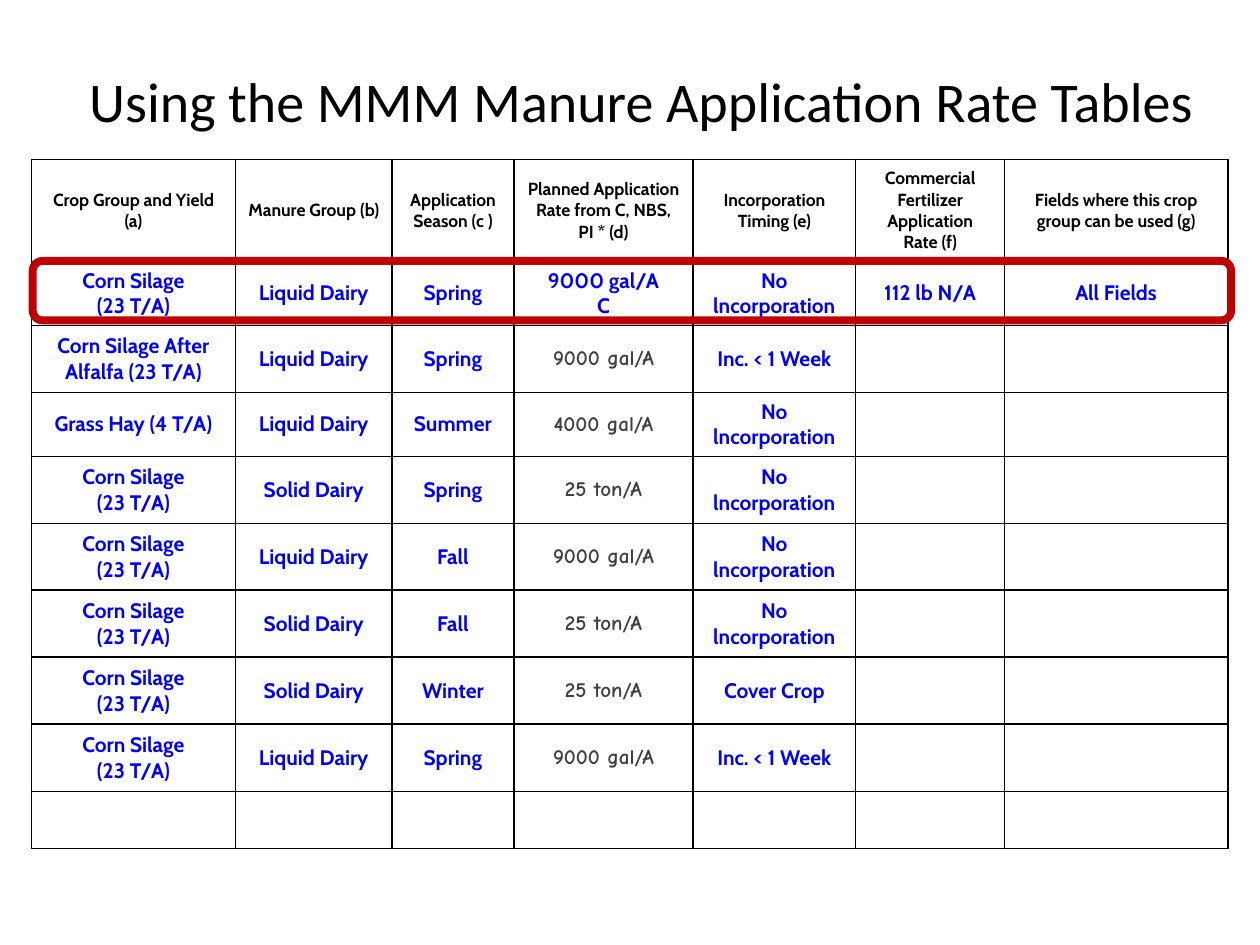
from lxml import etree
from pptx import Presentation
from pptx import util as u
from pptx.dml.color import RGBColor
from pptx.enum import shapes, text
from pptx.oxml import ns

BLACK, WHITE, BLUE, GREY, RED = "000000", "FFFFFF", "0000FF", "404040", "C00000"


def color(hex_string):
    return RGBColor.from_string(hex_string)


def add_borders(cell):
    """Draw a 1 pt black line on all four sides of the cell."""
    properties = cell._tc.get_or_add_tcPr()
    for position, side in enumerate(("lnL", "lnR", "lnT", "lnB")):
        line = etree.Element(ns.qn("a:" + side), w=str(u.Pt(1)))
        fill = etree.SubElement(line, ns.qn("a:solidFill"))
        etree.SubElement(fill, ns.qn("a:srgbClr"), val=BLACK)
        properties.insert(position, line)


presentation = Presentation()
presentation.slide_width = u.Cm(25.4)
presentation.slide_height = u.Cm(19.05)
slide = presentation.slides.add_slide(presentation.slide_layouts[6])

# Application rate table
corn = "Corn Silage\n(23 T/A)"
liquid, solid = "Liquid Dairy", "Solid Dairy"
surface, week = "No lncorporation", "Inc. < 1 Week"
rows = [
    ["Crop Group and Yield (a)", "Manure Group (b)", "Application Season (c )",
     "Planned Application Rate from C, NBS, PI * (d)", "Incorporation Timing (e)",
     "Commercial Fertilizer Application Rate (f)",
     "Fields where this crop group can be used (g)"],
    [corn, liquid, "Spring", "9000 gal/A\nC", surface, "112 lb N/A", "All Fields"],
    ["Corn Silage After Alfalfa (23 T/A)", liquid, "Spring", "9000 gal/A", week],
    ["Grass Hay (4 T/A)", liquid, "Summer", "4000 gal/A", surface],
    [corn, solid, "Spring", "25 ton/A", surface],
    [corn, liquid, "Fall", "9000 gal/A", surface],
    [corn, solid, "Fall", "25 ton/A", surface],
    [corn, solid, "Winter", "25 ton/A", "Cover Crop"],
    [corn, liquid, "Spring", "9000 gal/A", week],
    [],
]
column_widths = [4.12, 3.15, 2.46, 3.61, 3.28, 3.0, 4.5]
row_heights = [2.05, 1.24, 1.35, 1.29, 1.35, 1.35, 1.35, 1.35, 1.36, 1.15]
rate_column = 3

table = slide.shapes.add_table(
    len(rows), len(column_widths), u.Cm(0.63), u.Cm(3.22),
    u.Cm(sum(column_widths)), u.Cm(sum(row_heights))).table
table.first_row = table.horz_banding = False
for column, width in zip(table.columns, column_widths):
    column.width = u.Cm(width)

for row_index, (row, height) in enumerate(zip(rows, row_heights)):
    table.rows[row_index].height = u.Cm(height)
    for column_index in range(len(column_widths)):
        cell = table.cell(row_index, column_index)
        cell.fill.solid()
        cell.fill.fore_color.rgb = color(WHITE)
        add_borders(cell)
        if column_index >= len(row):
            continue
        cell.vertical_anchor = text.MSO_ANCHOR.MIDDLE
        cell.text_frame.text = row[column_index]
        is_header = row_index == 0
        is_pending_rate = row_index > 1 and column_index == rate_column
        for paragraph in cell.text_frame.paragraphs:
            paragraph.alignment = text.PP_ALIGN.CENTER
            font = paragraph.runs[0].font
            font.bold = True
            font.size = u.Pt(10 if is_header else 12)
            font.name = "Comic Neue" if is_pending_rate else "Cabin"
            font.color.rgb = color(
                BLACK if is_header else GREY if is_pending_rate else BLUE)

# Title
title = slide.shapes.add_textbox(u.Cm(1.8), u.Cm(1), u.Cm(22.63), u.Cm(2.03))
frame = title.text_frame
frame.word_wrap = True
frame.margin_left = frame.margin_right = 0
frame.vertical_anchor = text.MSO_ANCHOR.MIDDLE
frame.text = "Using the MMM Manure Application Rate Tables"
font = frame.paragraphs[0].runs[0].font
font.name = "Calibri"
font.size = u.Pt(32)
font.color.rgb = color(BLACK)

# Frame around the first crop row
highlight = slide.shapes.add_shape(
    shapes.MSO_SHAPE.ROUNDED_RECTANGLE, u.Cm(0.66), u.Cm(5.26), u.Cm(24.16), u.Cm(1.2))
highlight.shadow.inherit = False
highlight.fill.background()
highlight.line.color.rgb = color(RED)
highlight.line.width = u.Pt(4.5)

presentation.save("out.pptx")
